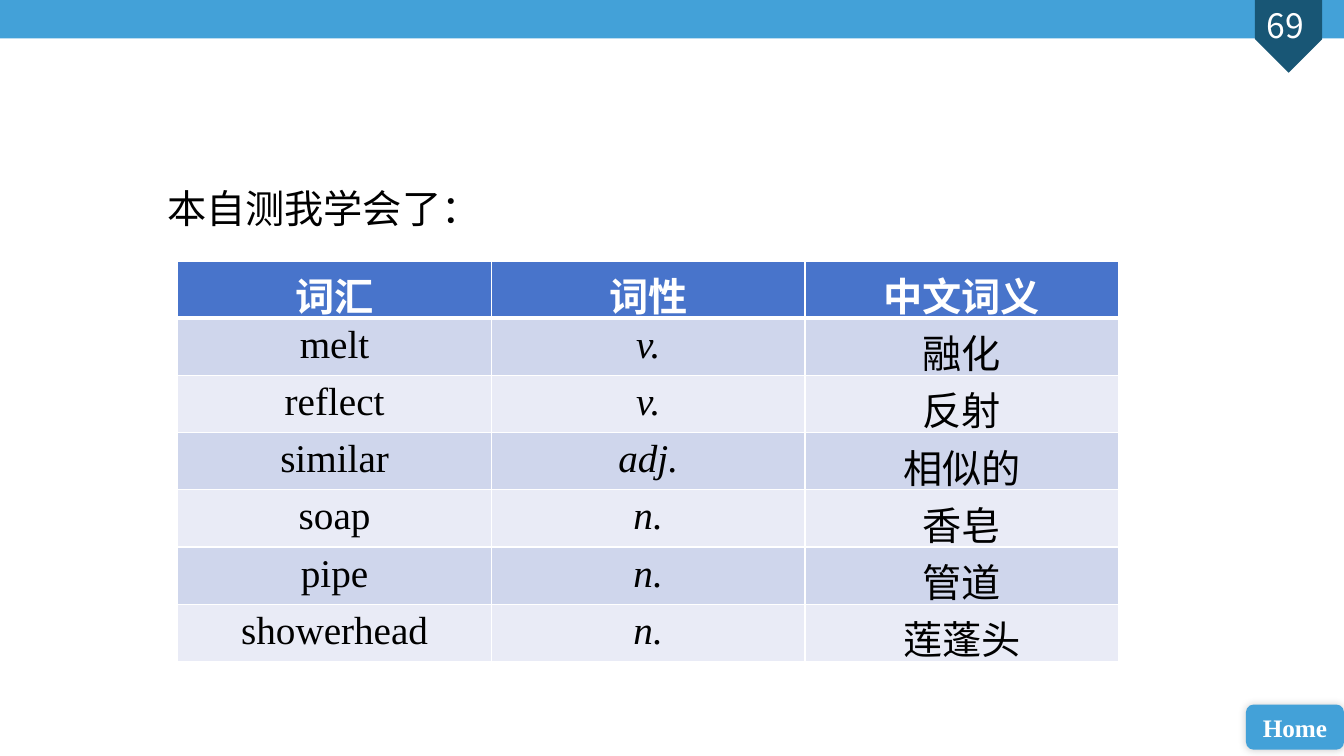
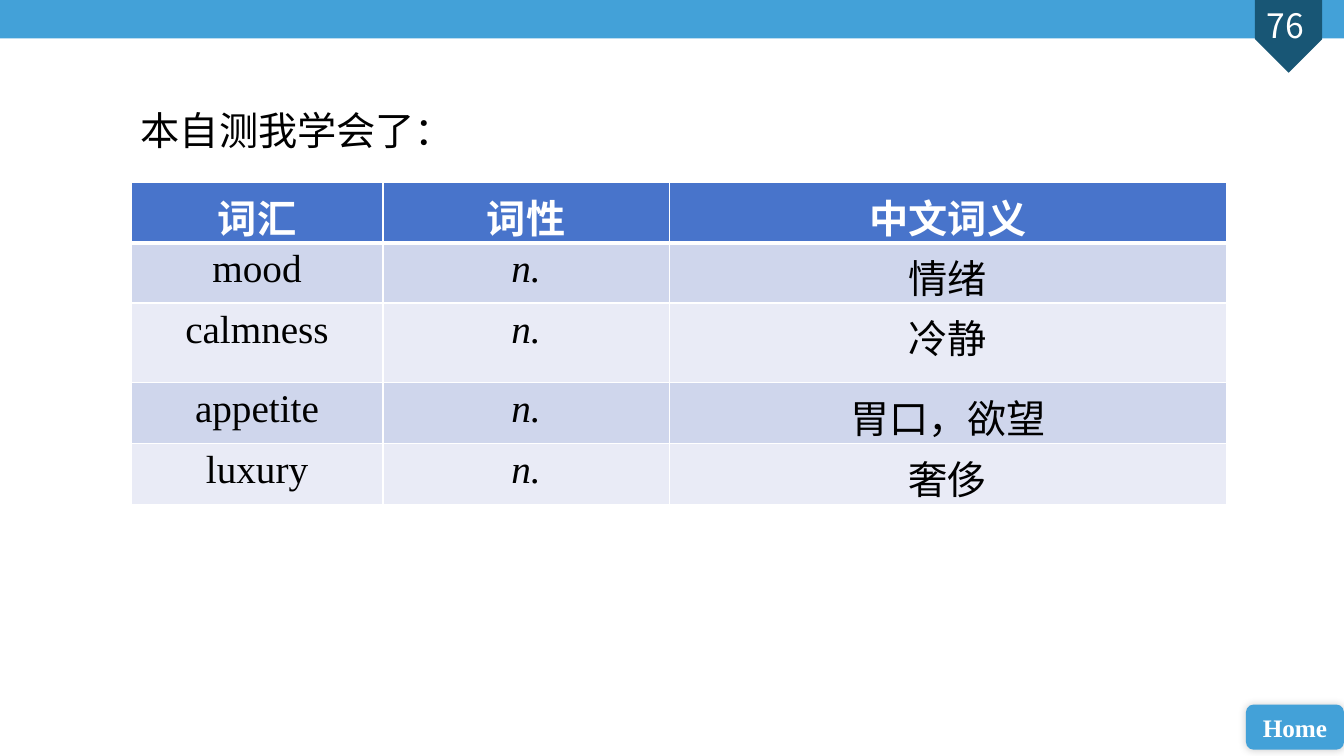
from dataclasses import dataclass

from lxml import etree
from pptx import Presentation
from pptx.dml.color import RGBColor
from pptx.enum import shapes, text
from pptx.oxml import ns
from pptx.util import Pt


@dataclass(frozen=True)
class Theme:
    band: str = "43A1D8"
    badge: str = "185675"
    header: str = "4874CB"
    stripes: tuple[str, str] = ("CFD6EC", "E9EBF6")
    ink: str = "000000"
    white: str = "FFFFFF"
    title_font: str = "Calibri"
    serif: str = "Times New Roman"
    cjk: str = "Noto Sans CJK SC"
    title_size: float = 28
    table_size: float = 28
    page_size: float = 24
    button_size: float = 18
    rule: float = 1
    header_rule: float = 3


@dataclass(frozen=True)
class Box:
    left: float
    top: float
    width: float
    height: float

    def lengths(self) -> tuple:
        return Pt(self.left), Pt(self.top), Pt(self.width), Pt(self.height)


@dataclass(frozen=True)
class VocabularySlide:
    page: str
    title: Box
    left: float
    top: float
    columns: tuple[float, ...]
    rows: tuple[float, ...]
    words: tuple[tuple[str, str, str], ...]


THEME = Theme()
TITLE = "本自测我学会了："
HEADER = ("词汇", "词性", "中文词义")
SLIDE_WIDTH, SLIDE_HEIGHT = 960, 540
BAND = Box(0, 0, SLIDE_WIDTH, 27.4)
BADGE = Box(894.4, 2, 52, 48)
PAGE = Box(883, 0, 70.5, 36)
HOME = Box(890, 503.3, 70, 32.2)

SLIDES = (
    VocabularySlide(
        "69", Box(112.3, 128.2, 278.6, 41.2), 127, 186.5, (224,) * 3, (40.8,) * 7,
        (
            ("melt", "v.", "融化"),
            ("reflect", "v.", "反射"),
            ("similar", "adj.", "相似的"),
            ("soap", "n.", "香皂"),
            ("pipe", "n.", "管道"),
            ("showerhead", "n.", "莲蓬头"),
        ),
    ),
    VocabularySlide(
        "76", Box(93.4, 72, 278.6, 41.2), 93.6, 130.5,
        (180, 204.4, 398.2), (43, 43, 57, 43.6, 43.6),
        (
            ("mood", "n.", "情绪"),
            ("calmness", "n.", "冷静"),
            ("appetite", "n.", "胃口，欲望"),
            ("luxury", "n.", "奢侈"),
        ),
    ),
)


def rgb(color: str) -> RGBColor:
    return RGBColor.from_string(color)


def set_text(tf, content: str, name: str, size: float, color: str,
             bold: bool = False, italic: bool = False,
             align=text.PP_ALIGN.CENTER) -> None:
    tf.text = content
    p = tf.paragraphs[0]
    p.alignment = align
    font = p.font
    font.name, font.size = name, Pt(size)
    font.bold, font.italic = bold, italic
    font.color.rgb = rgb(color)
    latin = p._p.find(".//" + ns.qn("a:latin"))
    east_asian = etree.Element(ns.qn("a:ea"), typeface=THEME.cjk)
    latin.addnext(east_asian)


def add_panel(slide, kind, box: Box, color: str):
    sp = slide.shapes.add_shape(kind, *box.lengths())
    sp.shadow.inherit = False
    sp.fill.solid()
    sp.fill.fore_color.rgb = rgb(color)
    sp.line.fill.background()
    return sp


def add_soft_shadow(sp) -> None:
    effects = sp._element.spPr.find(ns.qn("a:effectLst"))
    shadow = etree.SubElement(
        effects, ns.qn("a:outerShdw"),
        blurRad=str(Pt(6)), dist="0", dir=str(315 * 60000),
    )
    color = etree.SubElement(shadow, ns.qn("a:srgbClr"), val=THEME.ink)
    etree.SubElement(color, ns.qn("a:alpha"), val="20000")


def add_frame(slide, page: str) -> None:
    kinds = shapes.MSO_SHAPE
    add_panel(slide, kinds.RECTANGLE, BAND, THEME.band)
    badge = add_panel(slide, kinds.PENTAGON, BADGE, THEME.badge)
    badge.rotation = 90

    number = slide.shapes.add_textbox(*PAGE.lengths())
    tf = number.text_frame
    tf.word_wrap = True
    tf.vertical_anchor = text.MSO_ANCHOR.MIDDLE
    set_text(tf, page, THEME.cjk, THEME.page_size, THEME.white)

    home = add_panel(slide, kinds.ROUNDED_RECTANGLE, HOME, THEME.band)
    add_soft_shadow(home)
    tf = home.text_frame
    tf.word_wrap = False
    tf.vertical_anchor = text.MSO_ANCHOR.MIDDLE
    set_text(tf, "Home", THEME.serif, THEME.button_size, THEME.white, bold=True)


def set_title(slide, box: Box) -> None:
    sp = slide.shapes.title
    sp.left, sp.top, sp.width, sp.height = box.lengths()
    tf = sp.text_frame
    tf.word_wrap = True
    tf.auto_size = text.MSO_AUTO_SIZE.NONE
    tf.vertical_anchor = text.MSO_ANCHOR.MIDDLE
    set_text(tf, TITLE, THEME.title_font, THEME.title_size, THEME.ink,
             align=text.PP_ALIGN.LEFT)


def set_borders(cell, top: float, bottom: float) -> None:
    widths = {"lnL": THEME.rule, "lnR": THEME.rule, "lnT": top, "lnB": bottom}
    tc_pr = cell._tc.get_or_add_tcPr()
    for i, (tag, width) in enumerate(widths.items()):
        line = etree.Element(ns.qn("a:" + tag), w=str(Pt(width)))
        fill = etree.SubElement(line, ns.qn("a:solidFill"))
        etree.SubElement(fill, ns.qn("a:srgbClr"), val=THEME.white)
        tc_pr.insert(i, line)


def add_vocabulary(slide, item: VocabularySlide) -> None:
    box = Box(item.left, item.top, sum(item.columns), sum(item.rows))
    table = slide.shapes.add_table(
        len(item.rows), len(item.columns), *box.lengths()
    ).table
    for column, width in zip(table.columns, item.columns):
        column.width = Pt(width)
    for row, height in zip(table.rows, item.rows):
        row.height = Pt(height)

    for i, words in enumerate((HEADER, *item.words)):
        is_header = i == 0
        fill = THEME.header if is_header else THEME.stripes[(i - 1) % 2]
        top = THEME.header_rule if i == 1 else THEME.rule
        bottom = THEME.header_rule if is_header else THEME.rule
        for j, word in enumerate(words):
            cell = table.cell(i, j)
            cell.fill.solid()
            cell.fill.fore_color.rgb = rgb(fill)
            set_borders(cell, top, bottom)
            set_text(
                cell.text_frame, word, THEME.serif, THEME.table_size,
                THEME.white if is_header else THEME.ink,
                bold=is_header, italic=j == 1 and not is_header,
            )


def main() -> None:
    prs = Presentation()
    prs.slide_width, prs.slide_height = Pt(SLIDE_WIDTH), Pt(SLIDE_HEIGHT)
    title_only = prs.slide_layouts[5]
    for item in SLIDES:
        slide = prs.slides.add_slide(title_only)
        add_frame(slide, item.page)
        add_vocabulary(slide, item)
        set_title(slide, item.title)
    prs.save("out.pptx")


if __name__ == "__main__":
    main()
